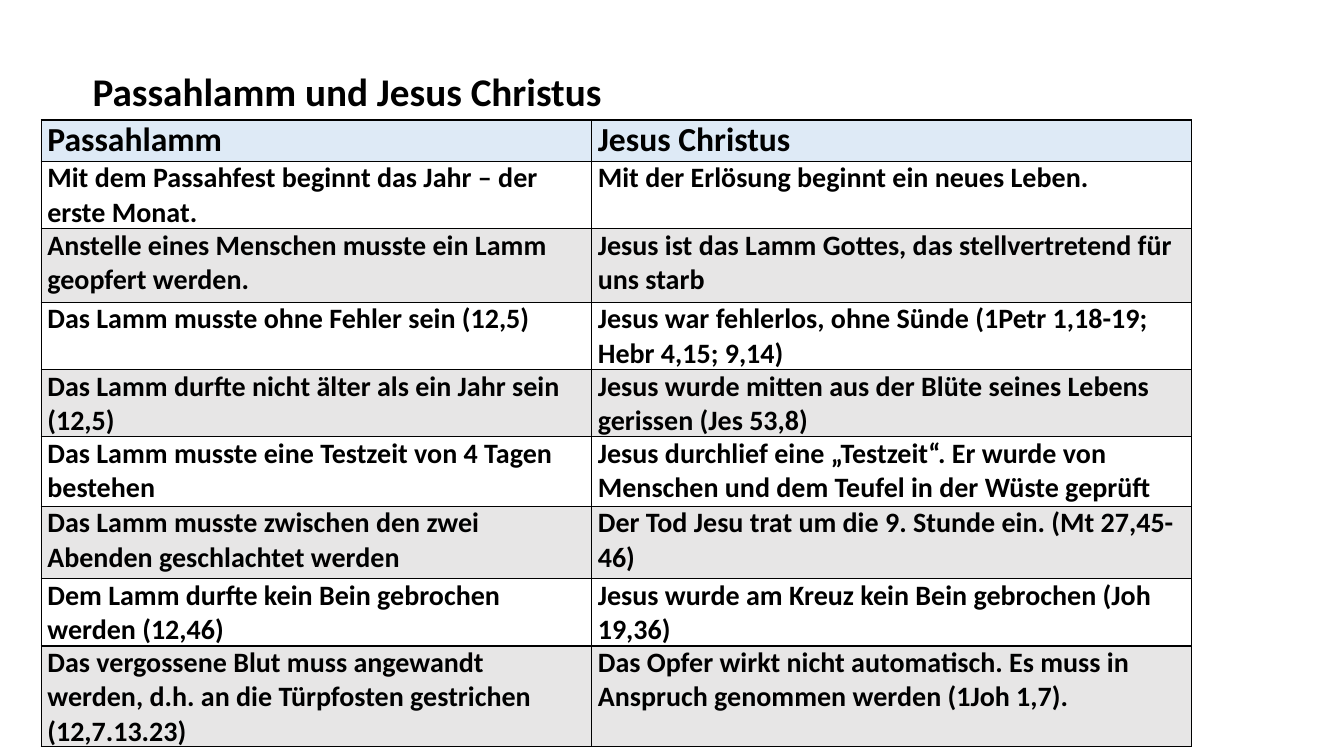
import pptx
import pptx.dml.color
import pptx.enum.text
import pptx.oxml
import pptx.oxml.ns
import pptx.util
from pptx.util import Inches

COLORS = {"text": "000000", "border": "000000", "header": "DEEAF6", "band": "E7E6E6"}
FONT = "Calibri"

COLUMN_WIDTHS = [5.46, 5.95]
ROWS = [
    (0.41, "Passahlamm", "Jesus Christus"),
    (0.66, "Mit dem Passahfest beginnt das Jahr – der erste Monat.",
     "Mit der Erlösung beginnt ein neues Leben."),
    (0.73, "Anstelle eines Menschen musste ein Lamm geopfert werden.",
     "Jesus ist das Lamm Gottes, das stellvertretend für uns starb"),
    (0.66, "Das Lamm musste ohne Fehler sein (12,5)",
     "Jesus war fehlerlos, ohne Sünde (1Petr 1,18-19; Hebr 4,15; 9,14)"),
    (0.66, "Das Lamm durfte nicht älter als ein Jahr sein (12,5)",
     "Jesus wurde mitten aus der Blüte seines Lebens gerissen (Jes 53,8)"),
    (0.69, "Das Lamm musste eine Testzeit von 4 Tagen bestehen",
     "Jesus durchlief eine „Testzeit“. Er wurde von Menschen und dem Teufel "
     "in der Wüste geprüft"),
    (0.72, "Das Lamm musste zwischen den zwei Abenden geschlachtet werden",
     "Der Tod Jesu trat um die 9. Stunde ein. (Mt 27,45-46)"),
    (0.66, "Dem Lamm durfte kein Bein gebrochen werden (12,46)",
     "Jesus wurde am Kreuz kein Bein gebrochen (Joh 19,36)"),
    (0.81, "Das vergossene Blut muss angewandt werden, d.h. an die Türpfosten "
     "gestrichen (12,7.13.23)",
     "Das Opfer wirkt nicht automatisch. Es muss in Anspruch genommen werden (1Joh 1,7)."),
]


def write_bold(frame, text, size):
    span = frame.paragraphs[0].add_run()
    span.text = text
    span.font.name = FONT
    span.font.size = pptx.util.Pt(size)
    span.font.bold = True
    span.font.color.rgb = pptx.dml.color.RGBColor.from_string(COLORS["text"])


def add_borders(cell):
    properties = cell._tc.get_or_add_tcPr()
    for side in ("lnL", "lnR", "lnT", "lnB"):
        properties.append(pptx.oxml.parse_xml(
            f'<a:{side} {pptx.oxml.ns.nsdecls("a")} w="{pptx.util.Pt(1)}">'
            f'<a:solidFill><a:srgbClr val="{COLORS["border"]}"/></a:solidFill></a:{side}>'))


deck = pptx.Presentation()
deck.slide_width = Inches(13.33)
deck.slide_height = Inches(7.5)
slide = deck.slides.add_slide(deck.slide_layouts[6])

title_box = slide.shapes.add_textbox(Inches(0.82), Inches(0.62), Inches(5.52), Inches(0.57))
title_box.text_frame.word_wrap = True
title_box.text_frame.auto_size = pptx.enum.text.MSO_AUTO_SIZE.SHAPE_TO_FIT_TEXT
write_bold(title_box.text_frame, "Passahlamm und Jesus Christus", 28)

table = slide.shapes.add_table(
    len(ROWS), len(COLUMN_WIDTHS), Inches(0.41), Inches(1.19),
    Inches(sum(COLUMN_WIDTHS)), Inches(sum(row[0] for row in ROWS))).table
for column, width in zip(table.columns, COLUMN_WIDTHS):
    column.width = Inches(width)

for row_index, (height, *texts) in enumerate(ROWS):
    table.rows[row_index].height = Inches(height)
    for column_index, text in enumerate(texts):
        cell = table.cell(row_index, column_index)
        cell.margin_left = cell.margin_right = Inches(0.06)
        cell.margin_top = cell.margin_bottom = 0
        add_borders(cell)
        if row_index % 2:
            cell.fill.background()
        else:
            cell.fill.solid()
            fill_name = "band" if row_index else "header"
            cell.fill.fore_color.rgb = pptx.dml.color.RGBColor.from_string(COLORS[fill_name])
        write_bold(cell.text_frame, text, 20 if row_index else 24)

deck.save("out.pptx")
